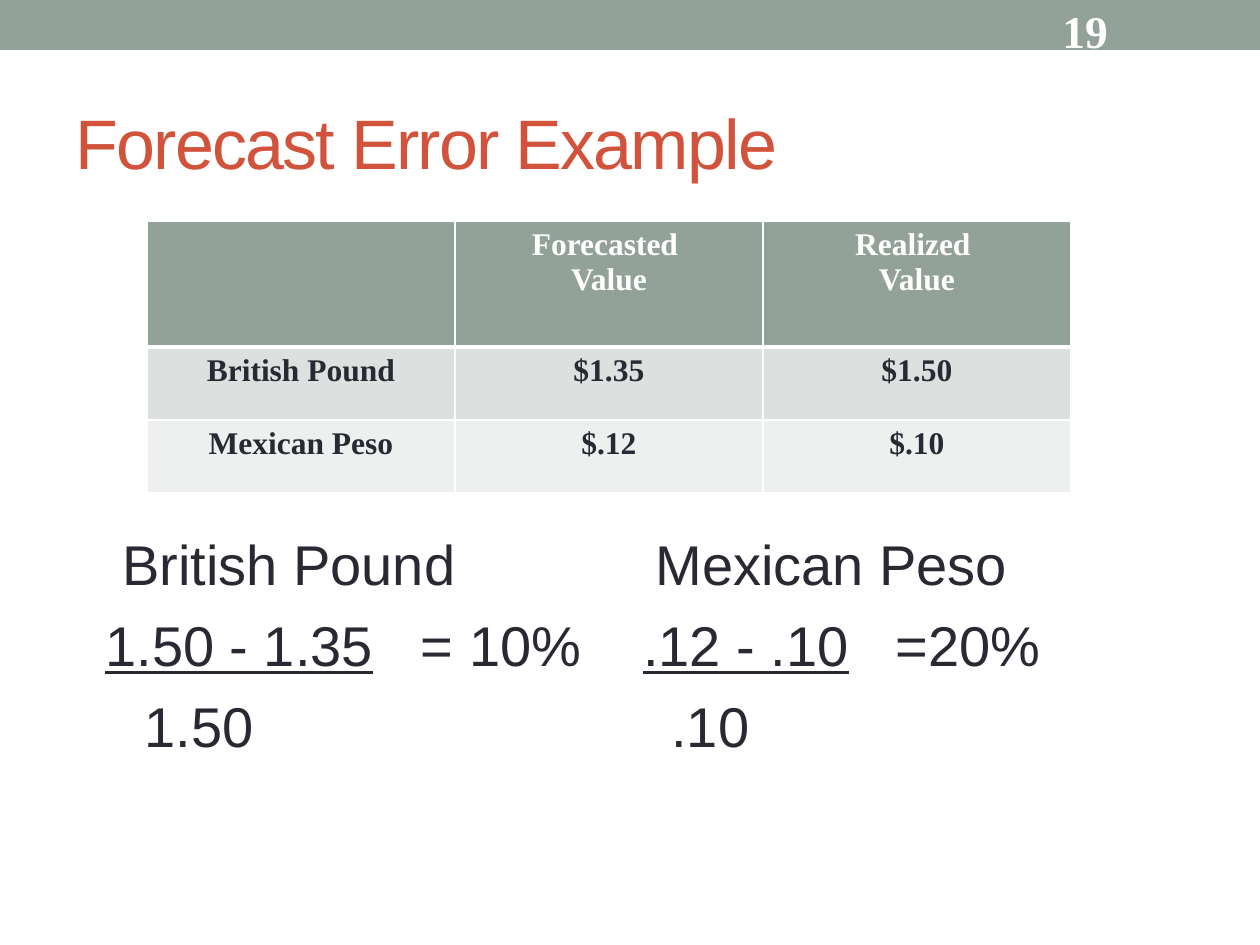
import pptx
import pptx.util
import pptx.dml.color
import pptx.enum.shapes
import pptx.enum.text
import pptx.oxml.ns
import lxml.etree

Pt = pptx.util.Pt
Align = pptx.enum.text.PP_ALIGN
Anchor = pptx.enum.text.MSO_ANCHOR
qn = pptx.oxml.ns.qn
COLORS = {"sage": "93A299", "red": "D2533C", "ink": "292934",
          "white": "FFFFFF", "band": "DCE0DE", "pale": "EEF0EF"}
SCALE = 914400 / 126


def emu(*sizes):
    return [round(size * SCALE) for size in sizes]


def style(run, size, face, color, bold=False):
    run.font.size = Pt(size)
    run.font.name = face
    run.font.bold = bold
    run.font.color.rgb = pptx.dml.color.RGBColor.from_string(COLORS[color])


deck = pptx.Presentation()
deck.slide_width, deck.slide_height = emu(1260, 945)
slide = deck.slides.add_slide(deck.slide_layouts[6])
shapes = slide.shapes

bar = shapes.add_shape(pptx.enum.shapes.MSO_SHAPE.RECTANGLE, *emu(0, 0, 1260, 50))
bar.shadow.inherit = False
bar.fill.solid()
bar.fill.fore_color.rgb = pptx.dml.color.RGBColor.from_string(COLORS["sage"])
bar.line.fill.background()

title = shapes.add_textbox(*emu(63, 73, 1134, 136)).text_frame
title.word_wrap = True
title.vertical_anchor = Anchor.MIDDLE
title.text = "Forecast Error Example"
run = title.paragraphs[0].runs[0]
style(run, 40, "Arial", "red")
run.font._element.set("spc", "-100")

number = shapes.add_textbox(*emu(1050, 3, 147, 45)).text_frame
number.word_wrap = True
number.margin_top = number.margin_bottom = 0
number.text = "19"
style(number.paragraphs[0].runs[0], 26, "Times New Roman", "white", True)

rows = [["", "Forecasted \nValue", "Realized \nValue"],
        ["British Pound", "$1.35", "$1.50"],
        ["Mexican Peso", "$.12", "$.10"]]
fills = ["sage", "band", "pale"]
table = shapes.add_table(3, 3, *emu(147, 221, 924, 272)).table
for col in table.columns:
    col.width = emu(308)[0]
for row, high in zip(table.rows, emu(126, 73, 73)):
    row.height = high
for r, words in enumerate(rows):
    for c, word in enumerate(words):
        cell = table.cell(r, c)
        cell.text = word
        for para in cell.text_frame.paragraphs:
            para.alignment = Align.CENTER
            for run in para.runs:
                style(run, 18, "Times New Roman", "ink" if r else "white", True)
        props = cell._tc.get_or_add_tcPr()
        for side in "LRTB":
            thick = (r, side) in [(0, "B"), (1, "T")]
            edge = lxml.etree.SubElement(props, qn("a:ln" + side),
                                         w=str(Pt(3 if thick else 1)))
            solid = lxml.etree.SubElement(edge, qn("a:solidFill"))
            lxml.etree.SubElement(solid, qn("a:srgbClr"), val=COLORS["white"])
        cell.fill.solid()
        cell.fill.fore_color.rgb = pptx.dml.color.RGBColor.from_string(COLORS[fills[r]])

lines = [
    ([47, 580], [("\tBritish Pound\tMexican Peso", False)]),
    ([30, 330, 568, 805], [("\t1.50 - 1.35\t", True), (" = 10%\t", False),
                           (".12 - .10\t", True), (" =20%", False)]),
    ([69, 596], [("\t1.50\t.10", False)]),
]
body = shapes.add_textbox(*emu(63, 523, 1134, 369)).text_frame
body.word_wrap = True
for i, (stops, parts) in enumerate(lines):
    para = body.add_paragraph() if i else body.paragraphs[0]
    para.space_before = Pt(8 if i else 0)
    tabs = lxml.etree.SubElement(para._p.get_or_add_pPr(), qn("a:tabLst"))
    for stop in emu(*stops):
        lxml.etree.SubElement(tabs, qn("a:tab"), pos=str(stop), algn="l")
    for words, under in parts:
        run = para.add_run()
        run.text = words
        style(run, 32, "Arial", "ink")
        run.font.underline = under

deck.save("out.pptx")
